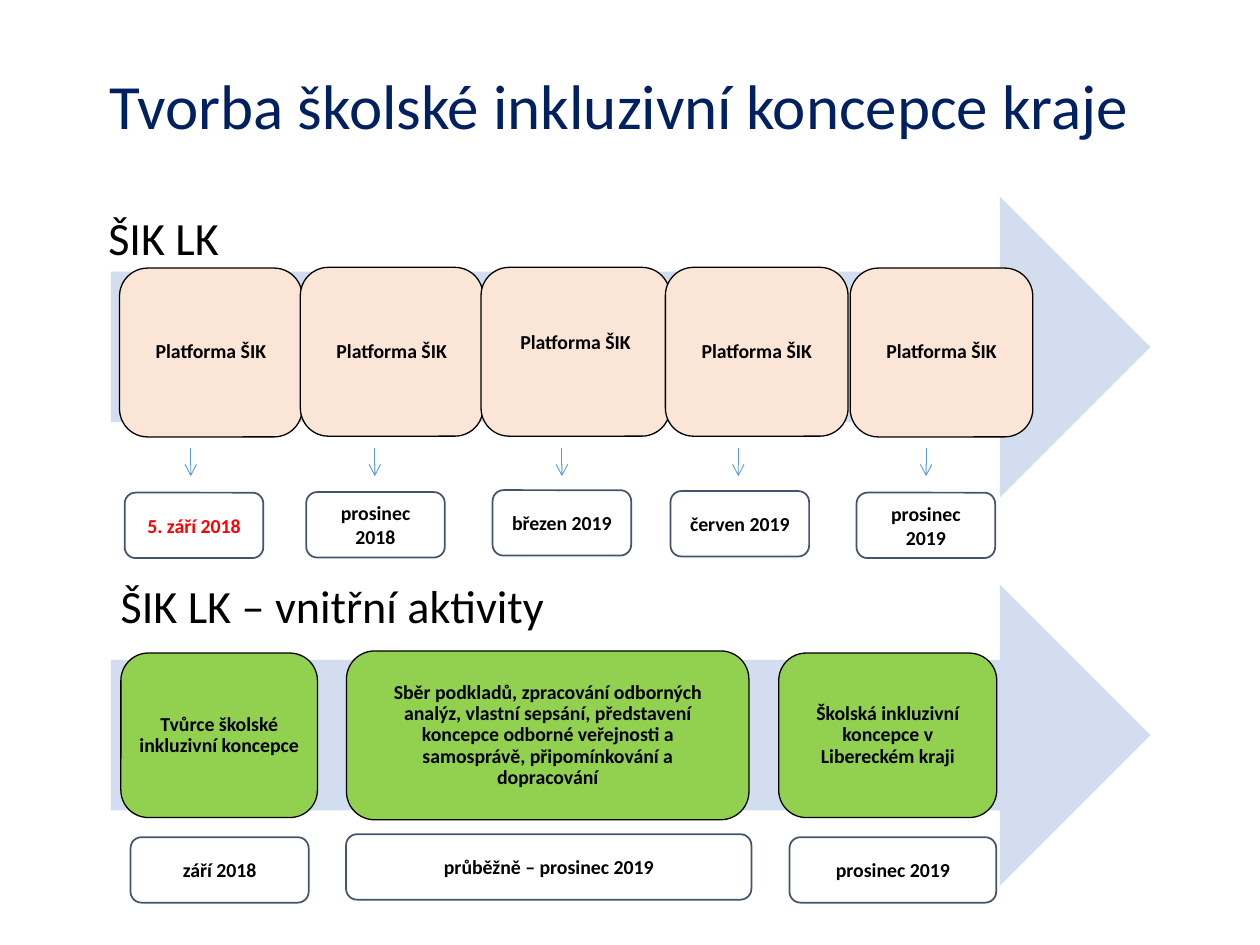
from pptx import Presentation
from pptx.dml.color import RGBColor
from pptx.enum.shapes import MSO_CONNECTOR, MSO_SHAPE
from pptx.enum.text import MSO_ANCHOR, PP_ALIGN
from pptx.oxml.ns import qn
from pptx.util import Pt
from lxml import etree

RIGHT_ARROW, ROUNDED = MSO_SHAPE.RIGHT_ARROW, MSO_SHAPE.ROUNDED_RECTANGLE
STRAIGHT = MSO_CONNECTOR.STRAIGHT
TOP, MIDDLE, BOTTOM = MSO_ANCHOR.TOP, MSO_ANCHOR.MIDDLE, MSO_ANCHOR.BOTTOM
LEFT, CENTER = PP_ALIGN.LEFT, PP_ALIGN.CENTER
TITLE_ONLY = 5
FONT = "Calibri"
BAND, PEACH, GREEN, WHITE = "D2DEEF", "FBE5D6", "92D050", "FFFFFF"
BLACK, RED, NAVY, SLATE, BLUE = "000000", "FF0000", "002060", "44546A", "5B9BD5"

PLATFORMS = [
    (68.3, 153.2, 104.4, 71.3, 281.5, 109, "5. září 2018", RED),
    (171.6, 152.8, 104.4, 175, 281.2, 214.2, "prosinec 2018", BLACK),
    (274.9, 152.8, 108, 281.5, 280.1, 321.1, "březen 2019", BLACK),
    (380.2, 152.8, 104.4, 383.2, 280.6, 421.9, "červen 2019", BLACK),
    (485.8, 153.2, 104.4, 489.5, 281.5, 529.2, "prosinec 2019", BLACK),
]
ACTIVITIES = [
    ((69.1, 373.2, 112.3, 94), (74.6, 478.4, 101.8, 37.4), 5,
     "Tvůrce školské inkluzivní koncepce", "září 2018"),
    ((198, 372, 230, 96.5), (197.8, 476.7, 231.6, 37.4), 10,
     "Sběr podkladů, zpracování odborných analýz, vlastní sepsání, představení "
     "koncepce odborné veřejnosti a samosprávě, připomínkování a dopracování",
     "průběžně – prosinec 2019"),
    ((445, 373.2, 124.6, 94), (451.2, 478.4, 118.1, 37.4), 5,
     "Školská inkluzivní koncepce v Libereckém kraji", "prosinec 2019"),
]


def rgb(code):
    """Turn a hex string into a colour."""
    return RGBColor.from_string(code)


def write(frame, text, size=11.3, color=BLACK, bold=False, align=CENTER,
          anchor=MIDDLE, spacing=1.0, insets=(7.2, 3.6, 7.2, 3.6)):
    """Write formatted text into a text frame."""
    frame.word_wrap = True
    frame.vertical_anchor = anchor
    (frame.margin_left, frame.margin_top,
     frame.margin_right, frame.margin_bottom) = map(Pt, insets)
    frame.text = text
    paragraph = frame.paragraphs[0]
    paragraph.alignment = align
    paragraph.line_spacing = spacing
    paragraph.font.name = FONT
    paragraph.font.size = Pt(size)
    paragraph.font.bold = bold
    paragraph.font.color.rgb = rgb(color)


def add_block(slide, preset, box, fill, line=None, weight=0.75):
    """Add a filled preset shape, outlined when a line colour is given."""
    block = slide.shapes.add_shape(preset, *map(Pt, box))
    block.shadow.inherit = False
    block.fill.solid()
    block.fill.fore_color.rgb = rgb(fill)
    if line:
        block.line.color.rgb = rgb(line)
        block.line.width = Pt(weight)
    else:
        block.line.fill.background()
    return block


def add_card(slide, box, fill, text, insets):
    """Add a large rounded card with bold text."""
    card = add_block(slide, ROUNDED, box, fill, BLACK)
    write(card.text_frame, text, bold=True, spacing=0.9, insets=insets)


def add_date(slide, box, text, color=BLACK):
    """Add a small white date box."""
    date = add_block(slide, ROUNDED, box, WHITE, SLATE, 1)
    write(date.text_frame, text, color=color, bold=True)


def add_down_arrow(slide, x, top, length):
    """Add a thin arrow pointing down."""
    arrow = slide.shapes.add_connector(
        STRAIGHT, Pt(x), Pt(top), Pt(x), Pt(top + length))
    arrow.line.color.rgb = rgb(BLUE)
    arrow.line.width = Pt(0.5)
    etree.SubElement(arrow.line._get_or_add_ln(), qn("a:tailEnd"), type="arrow")
    etree.SubElement(arrow._element.spPr, qn("a:effectLst"))


def add_heading(slide, box, text):
    """Add the heading of one timeline."""
    heading = slide.shapes.add_textbox(*map(Pt, box))
    write(heading.text_frame, text, size=26.4, align=LEFT, anchor=TOP)


def add_title(slide, box, text):
    """Place and format the slide title."""
    title = slide.shapes.title
    title.left, title.top, title.width, title.height = map(Pt, box)
    write(title.text_frame, text, size=36, color=NAVY, anchor=BOTTOM, spacing=0.9)


def add_platform_timeline(slide, left, top):
    """Draw the platform meetings with their dates on a band arrow."""
    add_block(slide, RIGHT_ARROW, (left, top, 594, 172), BAND)
    add_heading(slide, (left - 8.6, top + 3.6, 612.7, 40), "ŠIK LK")
    for x, y, width, date_x, date_y, arrow_x, date, color in PLATFORMS:
        raised = 10 if width > 105 else 0
        add_card(slide, (left + x - 63.4, top + y - 112.3, width, 96.5), PEACH,
                 "Platforma ŠIK", (3, 3.6, 3, 3.6 + raised))
        add_down_arrow(slide, left + arrow_x - 63.4, top + 144, 15.8)
        add_date(slide, (left + date_x - 63.4, top + date_y - 112.3, 79.2, 37.4),
                 date, color)


def add_activity_timeline(slide, left, top):
    """Draw the internal activities with their dates on a band arrow."""
    add_block(slide, RIGHT_ARROW, (left, top, 594, 172), BAND)
    add_heading(slide, (left - 1.5, top - 7.9, 612.7, 40),
                "ŠIK LK – vnitřní aktivity")
    for card, date, side, activity, term in ACTIVITIES:
        shift_x, shift_y = left - 63.4, top - 334.1
        add_card(slide, (card[0] + shift_x, card[1] + shift_y, *card[2:]), GREEN,
                 activity, (side, 3.6, side, 3.6))
        add_date(slide, (date[0] + shift_x, date[1] + shift_y, *date[2:]), term)


def main():
    """Build and save the slide."""
    deck = Presentation()
    deck.slide_width, deck.slide_height = Pt(720), Pt(540)
    slide = deck.slides.add_slide(deck.slide_layouts[TITLE_ONLY])
    add_title(slide, (54.7, 15.8, 598.3, 69.8),
              "Tvorba školské inkluzivní koncepce kraje")
    add_platform_timeline(slide, 63.4, 112.3)
    add_activity_timeline(slide, 63.4, 334.1)
    deck.save("out.pptx")


if __name__ == "__main__":
    main()
